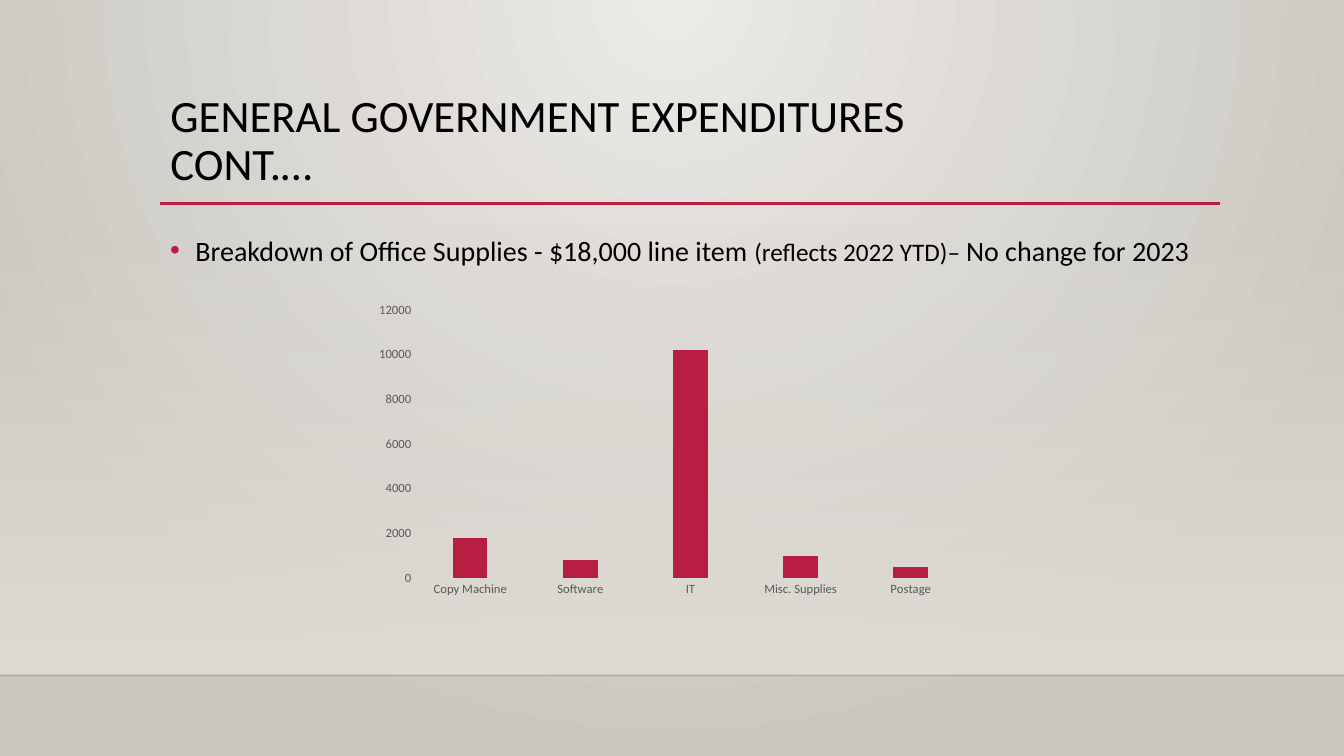
from dataclasses import dataclass

from lxml.etree import SubElement
from pptx import Presentation
from pptx.chart.data import CategoryChartData
from pptx.dml.color import RGBColor
from pptx.dml.fill import FillFormat
from pptx.enum.chart import XL_CHART_TYPE, XL_TICK_MARK
from pptx.enum.shapes import MSO_CONNECTOR, MSO_SHAPE
from pptx.enum.text import MSO_ANCHOR, MSO_AUTO_SIZE, PP_ALIGN
from pptx.oxml.ns import qn
from pptx.oxml.xmlchemy import BaseOxmlElement
from pptx.slide import Slide
from pptx.util import Inches, Pt


@dataclass(frozen=True)
class Theme:
    font: str = "Calibri"
    text: RGBColor = RGBColor(0x00, 0x00, 0x00)
    accent: RGBColor = RGBColor(0xB7, 0x1E, 0x42)
    glow: RGBColor = RGBColor(0xEC, 0xEA, 0xE7)
    edge: RGBColor = RGBColor(0xCA, 0xC7, 0xC1)
    wall: RGBColor = RGBColor(0xDF, 0xDB, 0xD5)
    floor_line: RGBColor = RGBColor(0x00, 0x00, 0x01)
    axis_text: RGBColor = RGBColor(0x59, 0x59, 0x59)
    grid: RGBColor = RGBColor(0xD9, 0xD9, 0xD9)
    title_size: int = 32
    body_size: int = 20
    note_size: int = 18
    chart_size: int = 10
    axis_size: int = 9


@dataclass(frozen=True)
class Rule:
    left: float
    right: float
    top: float
    color: RGBColor
    width: float
    opacity: int = 100


@dataclass(frozen=True)
class Phrase:
    text: str
    size: int


@dataclass(frozen=True)
class Expense:
    name: str
    amount: int


THEME = Theme()
WIDTH, HEIGHT = 13.33, 7.5
LEFT, CONTENT_WIDTH = 1.59, 10.5
WALL_TOP, FLOOR_TOP = 2.21, 6.7

RULES = [
    Rule(0, WIDTH, FLOOR_TOP, THEME.floor_line, 1, 20),
    Rule(LEFT, 12.1, 2.02, THEME.accent, 2.5),
]
PHRASES = [
    Phrase("Breakdown of Office Supplies - $18,000 line item ", THEME.body_size),
    Phrase("(reflects 2022 YTD)– ", THEME.note_size),
    Phrase("No change for 2023", THEME.body_size),
]
EXPENSES = [
    Expense("Copy Machine", 1800),
    Expense("Software", 800),
    Expense("IT", 10200),
    Expense("Misc. Supplies", 1000),
    Expense("Postage", 500),
]


def set_opacity(color: BaseOxmlElement, percent: int) -> None:
    SubElement(color, qn("a:alpha"), val=str(percent * 1000))


def set_gradient(fill: FillFormat, first: RGBColor, last: RGBColor) -> None:
    fill.gradient()
    for stop, color, position in zip(fill.gradient_stops, (first, last), (0, 1)):
        stop.color.rgb = color
        stop.position = position


def paint_background(slide: Slide) -> None:
    set_gradient(slide.background.fill, THEME.glow, THEME.edge)
    gradient = next(slide.element.iter(qn("a:gradFill")))
    gradient.remove(gradient.find(qn("a:lin")))
    circle = SubElement(gradient, qn("a:path"), {"path": "circle"})
    SubElement(circle, qn("a:fillToRect"), l="43000", t="0", r="43000", b="100000")


def add_wall(slide: Slide) -> None:
    wall = slide.shapes.add_shape(
        MSO_SHAPE.RECTANGLE, 0, Inches(WALL_TOP), Inches(WIDTH), Inches(FLOOR_TOP - WALL_TOP)
    )
    wall.shadow.inherit = False
    wall.line.fill.background()
    set_gradient(wall.fill, THEME.wall, THEME.wall)
    wall.fill.gradient_angle = 270
    set_opacity(next(wall.element.spPr.iter(qn("a:srgbClr"))), 0)


def add_rule(slide: Slide, rule: Rule) -> None:
    line = slide.shapes.add_connector(
        MSO_CONNECTOR.STRAIGHT,
        Inches(rule.left), Inches(rule.top), Inches(rule.right), Inches(rule.top),
    )
    line.line.color.rgb = rule.color
    line.line.width = Pt(rule.width)
    properties = line.element.spPr
    if rule.opacity < 100:
        set_opacity(next(properties.iter(qn("a:srgbClr"))), rule.opacity)
    SubElement(properties, qn("a:effectLst"))


def write_title(slide: Slide) -> None:
    title = slide.shapes.title
    title.left, title.top = Inches(LEFT), Inches(0.88)
    title.width, title.height = Inches(CONTENT_WIDTH), Inches(1.15)
    frame = title.text_frame
    frame.auto_size = MSO_AUTO_SIZE.NONE
    frame.vertical_anchor = MSO_ANCHOR.TOP
    paragraph = frame.paragraphs[0]
    paragraph.text = "GENERAL GOVERNMENT EXPENDITURES \vCONT.…"
    paragraph.alignment = PP_ALIGN.LEFT
    paragraph.line_spacing = 0.9
    paragraph.font.name = THEME.font
    paragraph.font.size = Pt(THEME.title_size)
    paragraph.font.color.rgb = THEME.text


def add_body(slide: Slide) -> None:
    box = slide.shapes.add_textbox(
        Inches(LEFT), Inches(2.2), Inches(CONTENT_WIDTH), Inches(3.77)
    )
    box.text_frame.word_wrap = True
    paragraph = box.text_frame.paragraphs[0]
    paragraph.line_spacing = 1.2
    # Bullet
    properties = paragraph._p.get_or_add_pPr()
    properties.set("marL", str(Inches(0.25)))
    properties.set("indent", str(Inches(-0.25)))
    bullet_color = SubElement(properties, qn("a:buClr"))
    SubElement(bullet_color, qn("a:srgbClr"), val=str(THEME.accent))
    SubElement(properties, qn("a:buFont"), typeface="Arial")
    SubElement(properties, qn("a:buChar"), char="•")
    # Text
    paragraph.font.name = THEME.font
    paragraph.font.color.rgb = THEME.text
    for phrase in PHRASES:
        run = paragraph.add_run()
        run.text = phrase.text
        run.font.size = Pt(phrase.size)


def add_expense_chart(slide: Slide) -> None:
    data = CategoryChartData()
    data.categories = [expense.name for expense in EXPENSES]
    data.add_series("Series 1", [expense.amount for expense in EXPENSES])
    chart = slide.shapes.add_chart(
        XL_CHART_TYPE.COLUMN_CLUSTERED,
        Inches(3.64), Inches(2.94), Inches(6.06), Inches(3.04), data,
    ).chart
    chart.has_title = False
    chart.has_legend = False
    chart.font.name = THEME.font
    chart.font.size = Pt(THEME.chart_size)
    chart.font.color.rgb = THEME.text
    # Columns
    plot = chart.plots[0]
    plot.vary_by_categories = False
    plot.gap_width = 219
    plot.overlap = -27
    columns = plot.series[0].format.fill
    columns.solid()
    columns.fore_color.rgb = THEME.accent
    # Axes
    for axis in (chart.category_axis, chart.value_axis):
        axis.major_tick_mark = axis.minor_tick_mark = XL_TICK_MARK.NONE
        axis.tick_labels.font.name = THEME.font
        axis.tick_labels.font.size = Pt(THEME.axis_size)
        axis.tick_labels.font.color.rgb = THEME.axis_text
    chart.value_axis.format.line.fill.background()
    for line in (chart.category_axis.format.line, chart.value_axis.major_gridlines.format.line):
        line.color.rgb = THEME.grid
        line.width = Pt(0.75)


def main() -> None:
    presentation = Presentation()
    presentation.slide_width, presentation.slide_height = Inches(WIDTH), Inches(HEIGHT)
    slide = presentation.slides.add_slide(presentation.slide_layouts.get_by_name("Title Only"))
    paint_background(slide)
    add_wall(slide)
    for rule in RULES:
        add_rule(slide, rule)
    write_title(slide)
    add_body(slide)
    add_expense_chart(slide)
    presentation.save("out.pptx")


if __name__ == "__main__":
    main()
